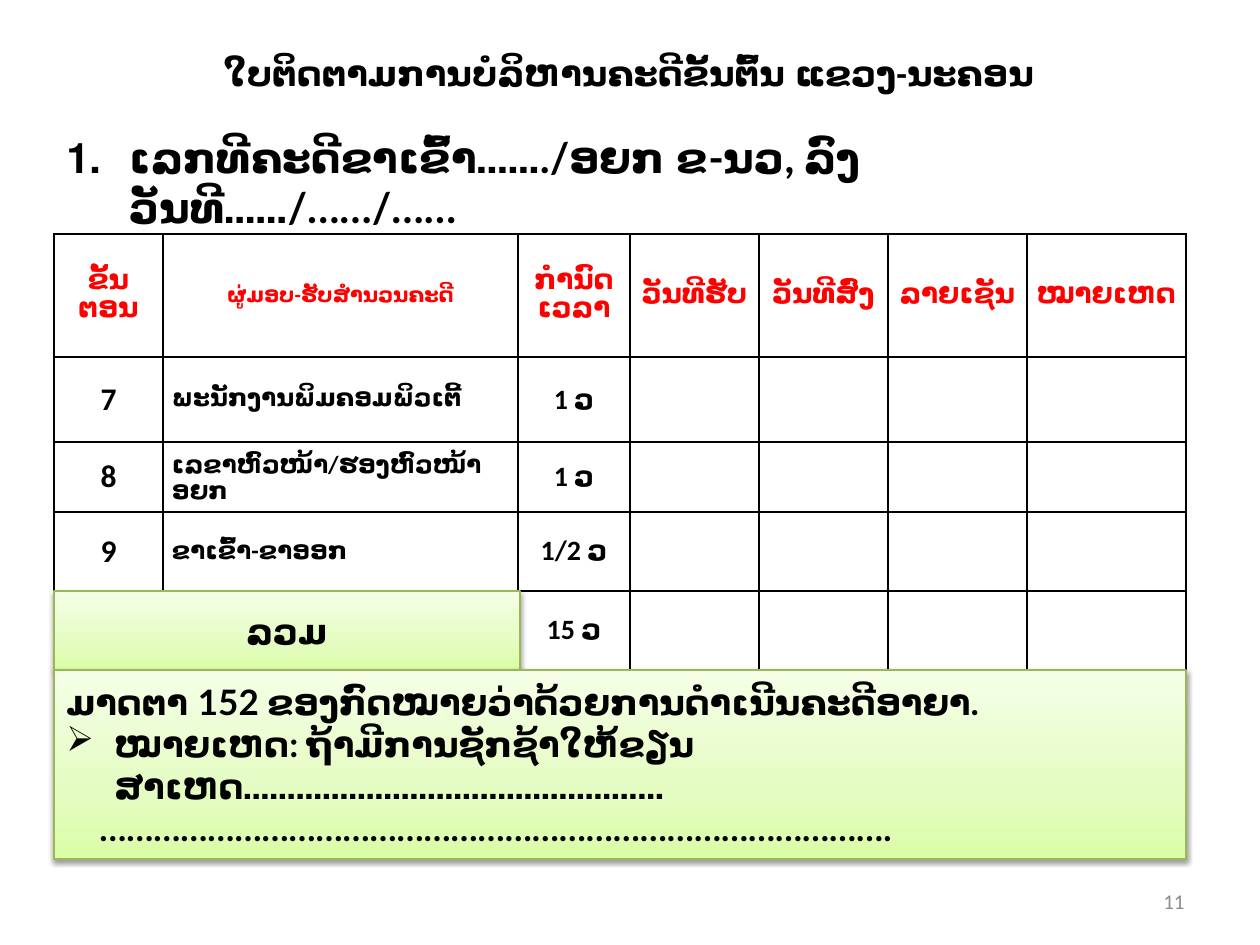
import pptx
import pptx.util
import pptx.dml.color
import pptx.enum.shapes
import pptx.enum.text
import pptx.oxml
import pptx.oxml.ns

RGB = pptx.dml.color.RGBColor
ALIGN = pptx.enum.text.PP_ALIGN
ANCHOR = pptx.enum.text.MSO_ANCHOR
NS = pptx.oxml.ns.nsdecls("a")

BLACK = RGB(0x00, 0x00, 0x00)
RED = RGB(0xFF, 0x00, 0x00)
GREY = RGB(0x8C, 0x8C, 0x8C)
GREEN = RGB(0x98, 0xB9, 0x55)
LIME = RGB(0xDA, 0xFD, 0xA7)
PALE = RGB(0xE4, 0xFC, 0xC2)
MIST = RGB(0xF5, 0xFF, 0xE7)

LEFT, TOP = 54, 234
COLS = [109, 355, 112, 129, 129, 139, 159]
ROWS = [123, 85, 70, 79, 79]
HEADS = ["ຂັ້ນ\nຕອນ", "ຜູ່ມອບ-ຮັບສໍານວນຄະດີ", "ກໍານົດເວລາ", "ວັນທີຮັບ",
         "ວັນທີສົ່ງ", "ລາຍເຊັນ", "ໝາຍເຫດ"]
STEPS = [
    ("7", "ພະນັກງານພິມຄອມພິວເຕີ້", "1 ວ"),
    ("8", "ເລຂາຫົວໜ້າ/ຮອງຫົວໜ້າ ອຍກ", "1 ວ"),
    ("9", "ຂາເຂົ້າ-ຂາອອກ", "1/2 ວ"),
    ("", "", "15 ວ"),
]
NUMBER = ('<a:buFont %s typeface="Arial"/>', '<a:buAutoNum %s type="arabicPeriod"/>')
ARROW = ('<a:buChar %s char="➢"/>',)


def px(n):
    return pptx.util.Emu(round(n * 914400 / 126))


def xml(text):
    return pptx.oxml.parse_xml(text)


class Deck:
    def __init__(self):
        self.prs = pptx.Presentation()
        self.prs.slide_width = px(1260)
        self.prs.slide_height = px(945)
        self.slide = self.prs.slides.add_slide(self.prs.slide_layouts[5])

    def run(self, para, text, size, font="Calibri", color=BLACK,
            bold=True, align=ALIGN.LEFT):
        para.alignment = align
        run = para.add_run()
        run.text = text
        run.font.name = font
        run.font.size = pptx.util.Pt(size)
        run.font.bold = bold
        run.font.color.rgb = color

    def indent(self, para, left, first=0, marks=()):
        """Set the margin and first-line offset, with optional bullet XML."""
        props = para._p.get_or_add_pPr()
        props.set("marL", str(px(left)))
        props.set("indent", str(px(first)))
        for mark in marks:
            props.append(xml(mark % NS))

    def title(self, box, text, size):
        shape = self.slide.shapes.title
        shape.left, shape.top, shape.width, shape.height = map(px, box)
        frame = shape.text_frame
        frame.auto_size = pptx.enum.text.MSO_AUTO_SIZE.NONE
        frame.vertical_anchor = ANCHOR.MIDDLE
        self.run(frame.paragraphs[0], text, size, align=ALIGN.CENTER)

    def text(self, box, anchor=ANCHOR.TOP):
        frame = self.slide.shapes.add_textbox(*map(px, box)).text_frame
        frame.word_wrap = True
        frame.vertical_anchor = anchor
        return frame

    def panel(self, box):
        """Add a green gradient box with a soft shadow; return its text frame."""
        kind = pptx.enum.shapes.MSO_SHAPE.RECTANGLE
        shape = self.slide.shapes.add_shape(kind, *map(px, box))
        stops = "".join(
            f'<a:gs pos="{pos}"><a:srgbClr val="{color}"/></a:gs>'
            for pos, color in ((0, LIME), (35000, PALE), (100000, MIST)))
        props = shape._element.spPr
        props.find(pptx.oxml.ns.qn("a:prstGeom")).addnext(xml(
            f'<a:gradFill {NS} rotWithShape="1"><a:gsLst>{stops}</a:gsLst>'
            '<a:lin ang="16200000" scaled="0"/></a:gradFill>'))
        shape.line.color.rgb = GREEN
        shape.line.width = pptx.util.Pt(0.75)
        shape.shadow.inherit = False
        props.find(pptx.oxml.ns.qn("a:effectLst")).append(xml(
            f'<a:outerShdw {NS} blurRad="40000" dist="20000" dir="5400000" '
            'rotWithShape="0"><a:srgbClr val="000000"><a:alpha val="38000"/>'
            '</a:srgbClr></a:outerShdw>'))
        frame = shape.text_frame
        frame.word_wrap = True
        frame.vertical_anchor = ANCHOR.MIDDLE
        return frame

    def border(self, cell):
        props = cell._tc.get_or_add_tcPr()
        for i, side in enumerate(("lnL", "lnR", "lnT", "lnB")):
            props.insert(i, xml(
                f'<a:{side} {NS} w="12700"><a:solidFill>'
                f'<a:srgbClr val="{BLACK}"/></a:solidFill></a:{side}>'))

    def cell(self, cell, text, size, color, align):
        cell.fill.background()
        cell.margin_left = cell.margin_right = px(9)
        cell.margin_top = cell.margin_bottom = 0
        cell.vertical_anchor = ANCHOR.MIDDLE
        self.border(cell)
        frame = cell.text_frame
        for i, line in enumerate(text.split("\n") if text else []):
            para = frame.add_paragraph() if i else frame.paragraphs[0]
            self.run(para, line, size, color=color, align=align)

    def table(self, left, top, cols, rows, heads, steps):
        grid = self.slide.shapes.add_table(
            len(rows), len(cols), px(left), px(top),
            px(sum(cols)), px(sum(rows))).table
        for col, width in zip(grid.columns, cols):
            col.width = px(width)
        for row, height in zip(grid.rows, rows):
            row.height = px(height)
        for c, head in enumerate(heads):
            size = 12 if c == 1 else 16
            self.cell(grid.cell(0, c), head, size, RED, ALIGN.CENTER)
        sizes = {0: 18, 1: 14}
        for r, step in enumerate(steps, 1):
            for c in range(len(cols)):
                text = step[c] if c < len(step) else ""
                align = ALIGN.LEFT if c == 1 else ALIGN.CENTER
                self.cell(grid.cell(r, c), text, sizes.get(c, 16), BLACK, align)


def main():
    deck = Deck()
    deck.title((54, 19, 1150, 106), "ໃບຕິດຕາມການບໍລິຫານຄະດີຂັ້ນຕົ້ນ ແຂວງ-ນະຄອນ", 20)
    deck.table(LEFT, TOP, COLS, ROWS, HEADS, STEPS)

    page = deck.text((903, 876, 294, 50), ANCHOR.MIDDLE)
    deck.run(page.paragraphs[0], "11", 12, color=GREY, bold=False,
             align=ALIGN.RIGHT)

    case = deck.text((LEFT, 125, 1101, 128)).paragraphs[0]
    deck.run(case, "ເລກທີຄະດີຂາເຂົ້າ……./ອຍກ ຂ-ນວ, ລົງວັນທີ……/……/……", 24, "Lato")
    deck.indent(case, 63, -63, NUMBER)

    base = TOP + sum(ROWS)
    total = deck.panel((LEFT, base - ROWS[-1], sum(COLS[:2]) + 2, ROWS[-1]))
    deck.run(total.paragraphs[0], "ລວມ", 20, "Lato", align=ALIGN.CENTER)

    note = deck.panel((LEFT, base, sum(COLS), 189))
    law, cause, rest = (note.paragraphs[0], note.add_paragraph(),
                        note.add_paragraph())
    deck.run(law, "ມາດຕາ 152 ຂອງກົດໝາຍວ່າດ້ວຍການດໍາເນີນຄະດີອາຍາ.", 20, "Lato")
    deck.run(cause, "ໝາຍເຫດ: ຖ້າມີການຊັກຊ້າໃຫ້ຂຽນສາເຫດ…………………………………………", 20, "Lato")
    deck.indent(cause, 48, -48, ARROW)
    deck.run(rest, "…………………………………………………………………………….", 20, "Lato")
    deck.indent(rest, 33)

    deck.prs.save("out.pptx")


if __name__ == "__main__":
    main()
